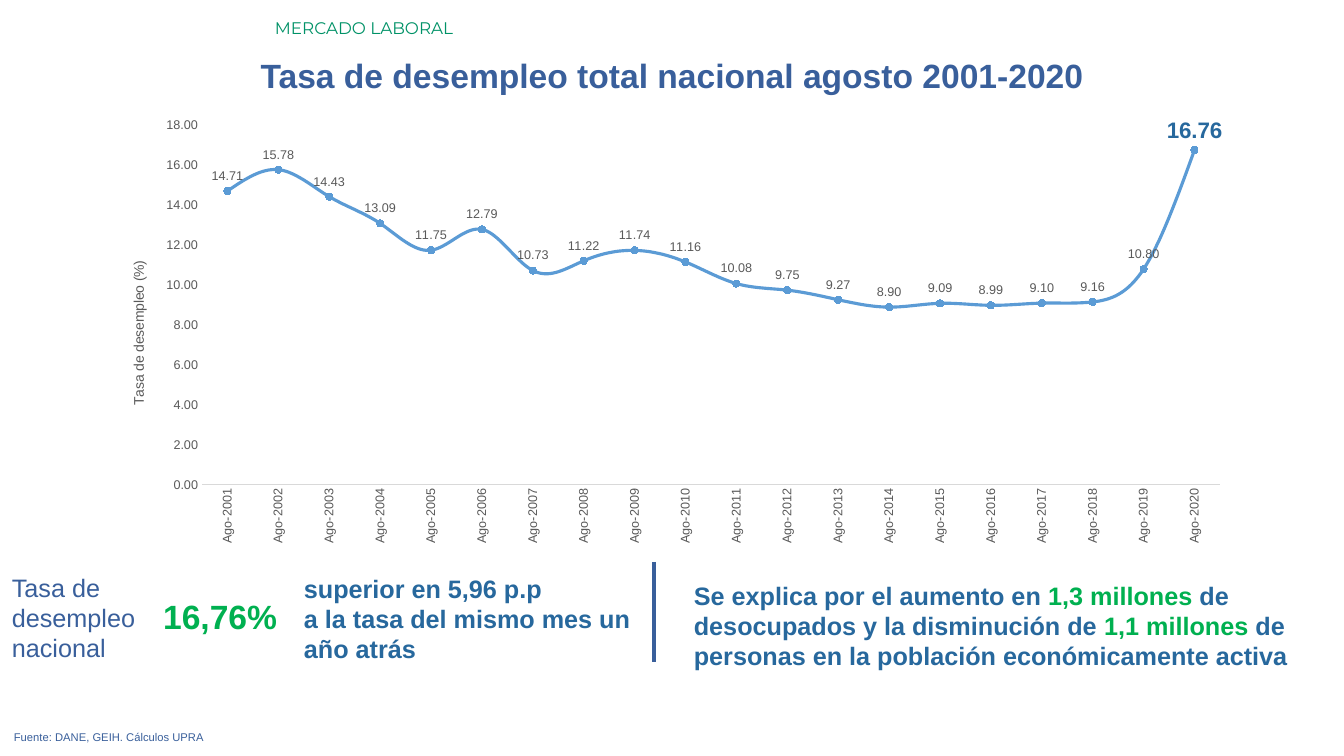
import pptx
import pptx.chart.data
import pptx.dml.color
import pptx.enum.chart
import pptx.enum.shapes
import pptx.enum.text
import pptx.oxml
import pptx.oxml.ns
import pptx.util

PX = 9071
BLUE, STEEL, GREEN, TEAL = "395F9B", "27689D", "00B050", "009267"
GRAY, AXIS_GRAY, LINE_BLUE = "595959", "D9D9D9", "5B9BD5"
ALIGN = pptx.enum.text.PP_ALIGN

deck = pptx.Presentation()
deck.slide_width, deck.slide_height = 1344 * PX, 756 * PX
page = deck.slides.add_slide(deck.slide_layouts[6])


def color(code):
    return pptx.dml.color.RGBColor.from_string(code)


def add_text(paragraphs, at, size, font="Arial", bold=False, align=ALIGN.LEFT):
    box = page.shapes.add_textbox(*[value * PX for value in at])
    frame = box.text_frame
    frame.word_wrap = True
    frame.auto_size = pptx.enum.text.MSO_AUTO_SIZE.SHAPE_TO_FIT_TEXT
    for number, spans in enumerate(paragraphs):
        para = frame.add_paragraph() if number else frame.paragraphs[0]
        para.alignment = align
        for text, code in spans:
            span = para.add_run()
            span.text = text
            span.font.name = font
            span.font.size = pptx.util.Pt(size)
            span.font.bold = bold
            span.font.color.rgb = color(code)


add_text([[("MERCADO LABORAL", TEAL)]], (265, 13, 1079, 30), 12, font="Montserrat")
add_text([[("Tasa de desempleo total nacional agosto 2001-2020", BLUE)]],
         (0, 50, 1344, 50), 24, bold=True, align=ALIGN.CENTER)
add_text([[("Tasa de desempleo nacional", BLUE)]], (2, 567, 224, 102), 18)
add_text([[("16,76%", GREEN)]], (131, 591, 156, 50), 24, bold=True, align=ALIGN.RIGHT)
add_text([[("superior en 5,96 p.p", STEEL)],
          [("a la tasa del mismo mes un año atrás", STEEL)]],
         (294, 568, 366, 102), 18, bold=True)
add_text([[("Se explica por el aumento en ", STEEL), ("1,3 millones ", GREEN),
           ("de desocupados y la disminución de ", STEEL), ("1,1 millones ", GREEN),
           ("de personas en la población económicamente activa", STEEL)]],
         (684, 575, 643, 102), 18, bold=True)
add_text([[("Fuente: DANE, GEIH. Cálculos UPRA", BLUE)]],
         (4, 725, 1301, 24), 8, align=ALIGN.JUSTIFY)

divider = page.shapes.add_connector(
    pptx.enum.shapes.MSO_CONNECTOR.STRAIGHT, 654 * PX, 562 * PX, 654 * PX, 662 * PX)
divider.line.color.rgb = color(BLUE)
divider.line.width = pptx.util.Pt(2.25)
divider._element.spPr.append(pptx.oxml.parse_xml(
    f'<a:effectLst {pptx.oxml.ns.nsdecls("a")}/>'))

rates = [14.71, 15.78, 14.43, 13.09, 11.75, 12.79, 10.73, 11.22, 11.74, 11.16,
         10.08, 9.75, 9.27, 8.9, 9.09, 8.99, 9.1, 9.16, 10.8, 16.76]
data = pptx.chart.data.CategoryChartData(number_format="0.00")
data.categories = [f"Ago-{2001 + index}" for index in range(len(rates))]
data.add_series("Tasa de desempleo", rates)
chart = page.shapes.add_chart(
    pptx.enum.chart.XL_CHART_TYPE.LINE_MARKERS,
    122 * PX, 118 * PX, 1114 * PX, 449 * PX, data).chart
chart.has_legend = False
chart.has_title = False
chart.font.name = "Arial"
chart.font.size = pptx.util.Pt(10)
chart.font.color.rgb = color(GRAY)

months, percent = chart.category_axis, chart.value_axis
for axis in (months, percent):
    axis.has_major_gridlines = False
    axis.major_tick_mark = pptx.enum.chart.XL_TICK_MARK.NONE
    axis.minor_tick_mark = pptx.enum.chart.XL_TICK_MARK.NONE
    axis.tick_labels.font.name = "Arial"
    axis.tick_labels.font.size = pptx.util.Pt(9)
    axis.tick_labels.font.color.rgb = color(GRAY)
months.format.line.color.rgb = color(AXIS_GRAY)
months.format.line.width = pptx.util.Pt(0.75)
months_body = months._element.txPr.bodyPr
months_body.set("rot", "-5400000")
months_body.set("vert", "horz")
percent.format.line.fill.background()
percent.minimum_scale, percent.maximum_scale, percent.major_unit = 0, 18, 2
percent.tick_labels.number_format = "0.00"
percent.tick_labels.number_format_is_linked = False
title_frame = percent.axis_title.text_frame
title_frame.text = "Tasa de desempleo (%)"
title_body = title_frame._txBody.bodyPr
title_body.set("rot", "-5400000")
title_body.set("vert", "horz")
title_font = title_frame.paragraphs[0].runs[0].font
title_font.name = "Arial"
title_font.size = pptx.util.Pt(10)
title_font.bold = False
title_font.color.rgb = color(GRAY)

series = chart.plots[0].series[0]
chart.plots[0].vary_by_categories = False
series.smooth = True
series.format.line.color.rgb = color(LINE_BLUE)
series.format.line.width = pptx.util.Pt(2.25)
series.marker.style = pptx.enum.chart.XL_MARKER_STYLE.CIRCLE
series.marker.size = 5
series.marker.format.fill.solid()
series.marker.format.fill.fore_color.rgb = color(LINE_BLUE)
series.marker.format.line.color.rgb = color(LINE_BLUE)

labels = series.data_labels
labels.show_value = True
labels.number_format = "#,##0.00"
labels.number_format_is_linked = False
last_label = series.points[len(rates) - 1].data_label
for label, size, code, bold in ((labels, 9, GRAY, False), (last_label, 16, STEEL, True)):
    label.position = pptx.enum.chart.XL_LABEL_POSITION.ABOVE
    label.font.name = "Arial"
    label.font.size = pptx.util.Pt(size)
    label.font.bold = bold
    label.font.color.rgb = color(code)

plot_area = chart._chartSpace.chart.plotArea
plot_layout = {"xMode": "edge", "yMode": "edge", "x": 80 / 1114, "y": 7 / 449,
               "w": 1018 / 1114, "h": 360 / 449}
title_layout = {"xMode": "edge", "yMode": "edge", "x": 5 / 1114, "y": 140 / 449}
for parent, index, target, layout in (
        (plot_area, 0, '<c:layoutTarget val="inner"/>', plot_layout),
        (percent.axis_title._element, 1, "", title_layout)):
    for old in parent.findall(pptx.oxml.ns.qn("c:layout")):
        parent.remove(old)
    parts = "".join(f'<c:{name} val="{value}"/>' for name, value in layout.items())
    parent.insert(index, pptx.oxml.parse_xml(
        f'<c:layout {pptx.oxml.ns.nsdecls("c")}><c:manualLayout>'
        f'{target}{parts}</c:manualLayout></c:layout>'))

deck.save("out.pptx")
